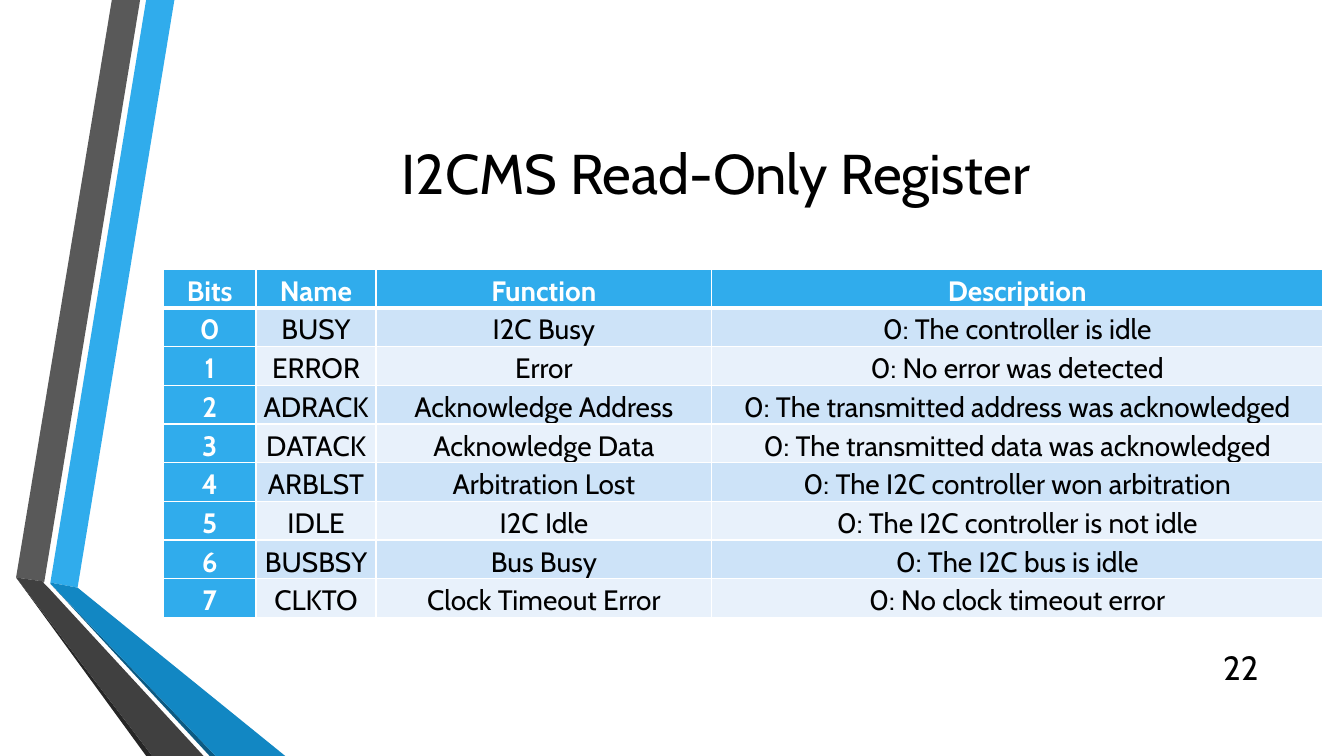
"""Build the I2CMS read-only register slide with its ribbon decoration and bit table."""
from dataclasses import dataclass
from typing import Any

from lxml import etree
from pptx import Presentation
from pptx import util as u
from pptx.dml import color
from pptx.enum import text
from pptx.oxml import ns

COLOURS = {
    "white": "FFFFFF", "black": "000000",
    "blue": "30ACEC", "deep_blue": "1287C3", "navy": "0C5A82",
    "grey": "595959", "dark_grey": "404040", "charcoal": "262626",
    "band_dark": "CDE3F8", "band_light": "E8F1FB",
}
FONT = "Cabin"
COLUMN_WIDTHS = (0.92, 1.19, 3.33, 6.06)
ROW_HEIGHT = 0.38
REGISTER_ROWS = (
    ("Bits", "Name", "Function", "Description"),
    ("0", "BUSY", "I2C Busy", "0: The controller is idle"),
    ("1", "ERROR", "Error", "0: No error was detected"),
    ("2", "ADRACK", "Acknowledge Address", "0: The transmitted address was acknowledged"),
    ("3", "DATACK", "Acknowledge Data", "0: The transmitted data was acknowledged"),
    ("4", "ARBLST", "Arbitration Lost", "0: The I2C controller won arbitration"),
    ("5", "IDLE", "I2C Idle", "0: The I2C controller is not idle"),
    ("6", "BUSBSY", "Bus Busy", "0: The I2C bus is idle"),
    ("7", "CLKTO", "Clock Timeout Error", "0: No clock timeout error"),
)


@dataclass(frozen=True)
class Ribbon:
    colour: str
    points: tuple[tuple[float, float], ...]


@dataclass(frozen=True)
class Label:
    content: str
    left: float
    top: float
    width: float
    height: float
    size: int
    alignment: Any


RIBBONS = (
    Ribbon("blue", ((0.5, 5.78), (0.77, 5.83), (1.73, 0), (1.45, 0))),
    Ribbon("grey", ((1.39, 0), (1.11, 0), (0.16, 5.73), (0.44, 5.77))),
    Ribbon("charcoal", ((0.16, 5.73), (1.45, 7.5), (1.51, 7.5))),
    Ribbon("navy", ((0.5, 5.79), (2.08, 7.5), (2.14, 7.5))),
    Ribbon("deep_blue", ((0.5, 5.78), (0.5, 5.79), (2.14, 7.5), (2.83, 7.5), (0.77, 5.83))),
    Ribbon("dark_grey", ((2.02, 7.5), (0.48, 5.83), (0.43, 5.78), (0.44, 5.77),
                         (0.16, 5.73), (1.51, 7.5))),
)
LABELS = (
    Label("I2CMS Read-Only Register", 1.62, 0.75, 10.96, 1.92, 40, text.PP_ALIGN.CENTER),
    Label("22", 11.98, 6.42, 0.6, 0.4, 24, text.PP_ALIGN.RIGHT),
)


def rgb(name: str) -> color.RGBColor:
    return color.RGBColor.from_string(COLOURS[name])


def apply_format(target: Any, values: dict[str, Any]) -> None:
    for name, value in values.items():
        setattr(target, name, value)


def write_text(frame: Any, content: str, size: int, colour: str, bold: bool,
               paragraph_format: dict[str, Any]) -> None:
    paragraph = frame.paragraphs[0]
    apply_format(paragraph, paragraph_format)
    run = paragraph.add_run()
    run.text = content
    apply_format(run.font, {"name": FONT, "size": u.Pt(size), "bold": bold})
    run.font.color.rgb = rgb(colour)


def draw_ribbon(slide: Any, ribbon: Ribbon) -> None:
    start, *others = [(u.Inches(x), u.Inches(y)) for x, y in ribbon.points]
    builder = slide.shapes.build_freeform(*start)
    builder.add_line_segments(others, close=True)
    shape = builder.convert_to_shape()
    shape.shadow.inherit = False
    shape.fill.solid()
    shape.fill.fore_color.rgb = rgb(ribbon.colour)
    shape.line.fill.background()


def draw_label(slide: Any, label: Label) -> None:
    bounds = (label.left, label.top, label.width, label.height)
    frame = slide.shapes.add_textbox(*map(u.Inches, bounds)).text_frame
    apply_format(frame, {"word_wrap": True, "vertical_anchor": text.MSO_ANCHOR.MIDDLE})
    write_text(frame, label.content, label.size, "black", False, {"alignment": label.alignment})


def set_borders(cell: Any, widths: dict[str, int]) -> None:
    properties = cell._tc.get_or_add_tcPr()
    for index, (side, width) in enumerate(widths.items()):
        line = etree.Element(ns.qn(f"a:{side}"), w=str(u.Pt(width)))
        fill = etree.SubElement(line, ns.qn("a:solidFill"))
        etree.SubElement(fill, ns.qn("a:srgbClr"), val=COLOURS["white"])
        properties.insert(index, line)


def draw_cell(cell: Any, content: str, row: int, column: int) -> None:
    is_heading = row == 0 or column == 0
    band = "band_dark" if row % 2 else "band_light"
    apply_format(cell, {
        "margin_left": u.Inches(0.07), "margin_right": u.Inches(0.07),
        "margin_top": 0, "margin_bottom": 0,
    })
    cell.fill.solid()
    cell.fill.fore_color.rgb = rgb("blue" if is_heading else band)
    write_text(cell.text_frame, content, 20, "white" if is_heading else "black", is_heading,
               {"alignment": text.PP_ALIGN.CENTER, "line_spacing": 1.15})
    set_borders(cell, {"lnL": 1, "lnR": 1, "lnT": 3 if row == 1 else 1,
                       "lnB": 3 if row == 0 else 1})


def draw_register_table(slide: Any) -> None:
    bounds = (1.62, 2.67, sum(COLUMN_WIDTHS), ROW_HEIGHT * len(REGISTER_ROWS))
    table = slide.shapes.add_table(
        len(REGISTER_ROWS), len(COLUMN_WIDTHS), *map(u.Inches, bounds)).table
    for table_column, width in zip(table.columns, COLUMN_WIDTHS):
        table_column.width = u.Inches(width)
    for row, contents in enumerate(REGISTER_ROWS):
        table.rows[row].height = u.Inches(ROW_HEIGHT)
        for column, content in enumerate(contents):
            draw_cell(table.cell(row, column), content, row, column)


def main() -> None:
    presentation = Presentation()
    apply_format(presentation, {"slide_width": u.Inches(13.33), "slide_height": u.Inches(7.5)})
    slide = presentation.slides.add_slide(presentation.slide_layouts[6])
    for ribbon in RIBBONS:
        draw_ribbon(slide, ribbon)
    for label in LABELS:
        draw_label(slide, label)
    draw_register_table(slide)
    presentation.save("out.pptx")


if __name__ == "__main__":
    main()
